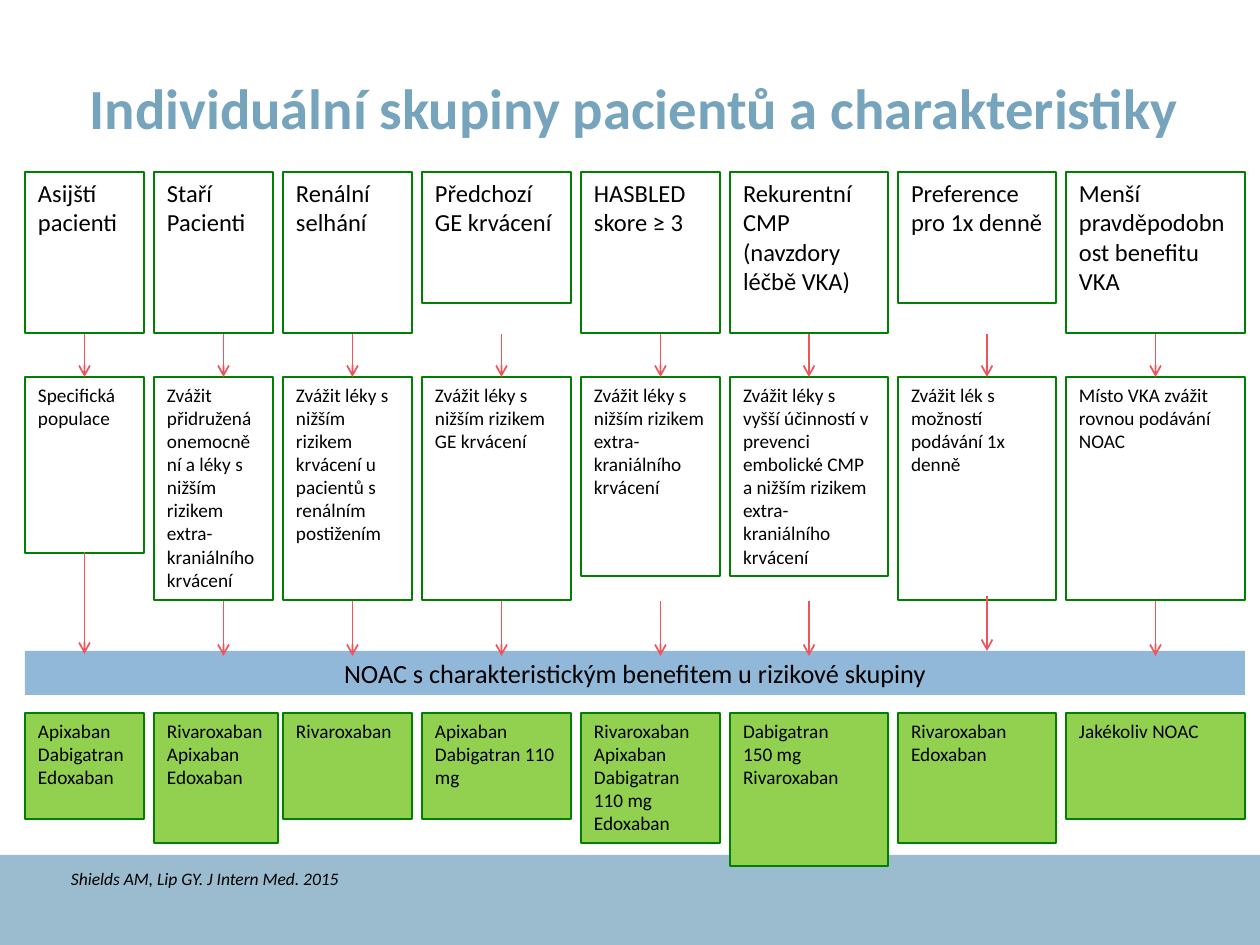
from lxml import etree
from pptx import Presentation
from pptx.dml.color import RGBColor
from pptx.enum.shapes import MSO_CONNECTOR, MSO_SHAPE
from pptx.enum.text import MSO_ANCHOR, PP_ALIGN
from pptx.oxml.ns import qn
from pptx.util import Inches, Pt

RECTANGLE, STRAIGHT = MSO_SHAPE.RECTANGLE, MSO_CONNECTOR.STRAIGHT
LEFT, CENTER = PP_ALIGN.LEFT, PP_ALIGN.CENTER
TOP, MIDDLE = MSO_ANCHOR.TOP, MSO_ANCHOR.MIDDLE
BLACK = RGBColor(0x00, 0x00, 0x00)
WHITE = RGBColor(0xFF, 0xFF, 0xFF)
BORDER = RGBColor(0x00, 0x80, 0x00)
DRUG_GREEN = RGBColor(0x92, 0xD0, 0x50)
BANNER_BLUE = RGBColor(0x91, 0xB7, 0xD9)
THEME_BLUE = RGBColor(0x76, 0xA4, 0xBD)
ARROW_RED = RGBColor(0xEE, 0x54, 0x5A)

TITLE = "Individuální skupiny pacientů a charakteristiky"
BANNER = "NOAC s charakteristickým benefitem u rizikové skupiny"
CITATION = "Shields AM, Lip GY. J Intern Med. 2015"

# One row per column: (text, box height) for group, advice and drugs
COLUMNS = [
    (("Asijští pacienti", 161), ("Specifická populace", 176),
     ("Apixaban\nDabigatran\nEdoxaban", 106)),
    (("Staří\nPacienti", 161),
     ("Zvážit přidružená onemocnění a léky s nižším rizikem extra-kraniálního krvácení", 223),
     ("Rivaroxaban\nApixaban\nEdoxaban", 130)),
    (("Renální selhání", 161),
     ("Zvážit léky s nižším rizikem krvácení u pacientů s renálním postižením", 223),
     ("Rivaroxaban", 106)),
    (("Předchozí GE krvácení", 131), ("Zvážit léky s nižším rizikem GE krvácení", 223),
     ("Apixaban\nDabigatran 110 mg", 106)),
    (("HASBLED skore ≥ 3", 161),
     ("Zvážit léky s nižším rizikem extra-kraniálního krvácení", 199),
     ("Rivaroxaban\nApixaban\nDabigatran 110 mg\nEdoxaban", 130)),
    (("Rekurentní CMP (navzdory léčbě VKA)", 161),
     ("Zvážit léky s vyšší účinností v prevenci embolické CMP a nižším rizikem "
      "extra-kraniálního krvácení", 199),
     ("Dabigatran\n150 mg\nRivaroxaban", 153)),
    (("Preference pro 1x denně", 131), ("Zvážit lék s možností podávání 1x denně", 223),
     ("Rivaroxaban\nEdoxaban", 130)),
    (("Menší pravděpodobnost benefitu VKA", 161),
     ("Místo VKA zvážit rovnou podávání NOAC", 223), ("Jakékoliv NOAC", 106)),
]
WIDTHS = [119, 119, 129, 149, 139, 158, 158, 179]
ARROW_SHIFTS = [0, 10, 5, 5, 10, 0, 10, 0]  # from the column centre
LOWER_ARROWS = {0: (552, 654), 6: (596, 651)}  # the others use the default
DEFAULT_LOWER_ARROW = (601, 656)
UPPER_ARROW = (334, 377)
DRUG_WIDTH_EXTRA = {1: 5}
ROWS = [(172, 14, WHITE), (377, 11, WHITE), (713, 11, DRUG_GREEN)]  # top, size, fill
COLUMN_LEFT, COLUMN_GAP = 25, 10
SCALE = Inches(1) / 126


def px(value):
    return round(value * SCALE)


def write(shape, text, size, color=BLACK, bold=False, italic=False, align=LEFT,
          anchor=TOP, margins=(13, 6), spacing=None):
    frame = shape.text_frame
    frame.word_wrap = True
    frame.vertical_anchor = anchor
    frame.margin_left = frame.margin_right = px(margins[0])
    frame.margin_top = frame.margin_bottom = px(margins[1])
    frame.text = text
    for paragraph in frame.paragraphs:
        paragraph.alignment = align
        paragraph.line_spacing = spacing
        font = paragraph.font
        font.name, font.size = "Calibri", Pt(size)
        font.bold, font.italic = bold, italic
        font.color.rgb = color


def add_box(left, top, width, height, fill, border=None):
    shape = slide.shapes.add_shape(RECTANGLE, px(left), px(top), px(width), px(height))
    shape.shadow.inherit = False
    shape.fill.solid()
    shape.fill.fore_color.rgb = fill
    if border is None:
        shape.line.fill.background()
    else:
        shape.line.color.rgb = border
        shape.line.width = Pt(0.75)
    return shape


def add_arrow(x, top, bottom):
    arrow = slide.shapes.add_connector(STRAIGHT, px(x), px(top), px(x), px(bottom))
    arrow.line.color.rgb = ARROW_RED
    arrow.line.width = Pt(1)
    properties = arrow._element.spPr
    etree.SubElement(properties.find(qn("a:ln")), qn("a:tailEnd"), type="arrow")
    etree.SubElement(properties, qn("a:effectLst"))


def add_text(left, top, width, height, text, **style):
    box = slide.shapes.add_textbox(px(left), px(top), px(width), px(height))
    write(box, text, margins=(8, 4), spacing=0.9, **style)


presentation = Presentation()
presentation.slide_width, presentation.slide_height = px(1260), px(945)
slide = presentation.slides.add_slide(presentation.slide_layouts[6])

# Translucent footer band
footer = add_box(0, 855, 1260, 90, THEME_BLUE)
footer_color = footer._element.spPr.find(qn("a:solidFill"))[0]
etree.SubElement(footer_color, qn("a:alpha"), val="73000")

# Banner between advice and drugs
banner = add_box(25, 651, 1220, 44, BANNER_BLUE)
write(banner, BANNER, 15, align=CENTER)

# Columns of boxes with arrows
left = COLUMN_LEFT
for index, (column, width) in enumerate(zip(COLUMNS, WIDTHS)):
    extras = (0, 0, DRUG_WIDTH_EXTRA.get(index, 0))
    for (text, height), (top, size, fill), extra in zip(column, ROWS, extras):
        write(add_box(left, top, width + extra, height, fill, BORDER), text, size)
    center = left + width / 2 + ARROW_SHIFTS[index]
    for span in (UPPER_ARROW, LOWER_ARROWS.get(index, DEFAULT_LOWER_ARROW)):
        add_arrow(center, *span)
    left += width + COLUMN_GAP

# Title and citation
add_text(63, 69, 1142, 84, TITLE, size=32.4, color=THEME_BLUE, bold=True,
         align=CENTER, anchor=MIDDLE)
add_text(63, 866, 466, 69, CITATION, size=10, italic=True)

presentation.save("out.pptx")
